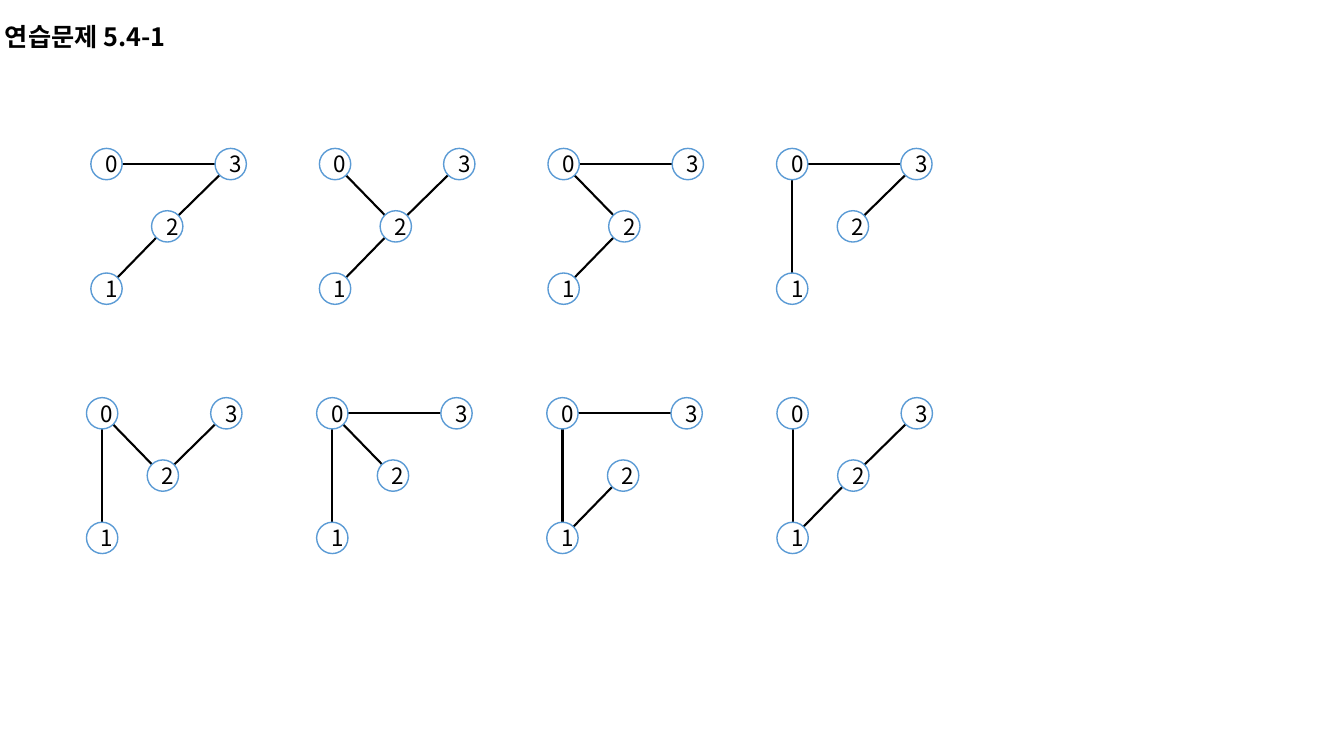
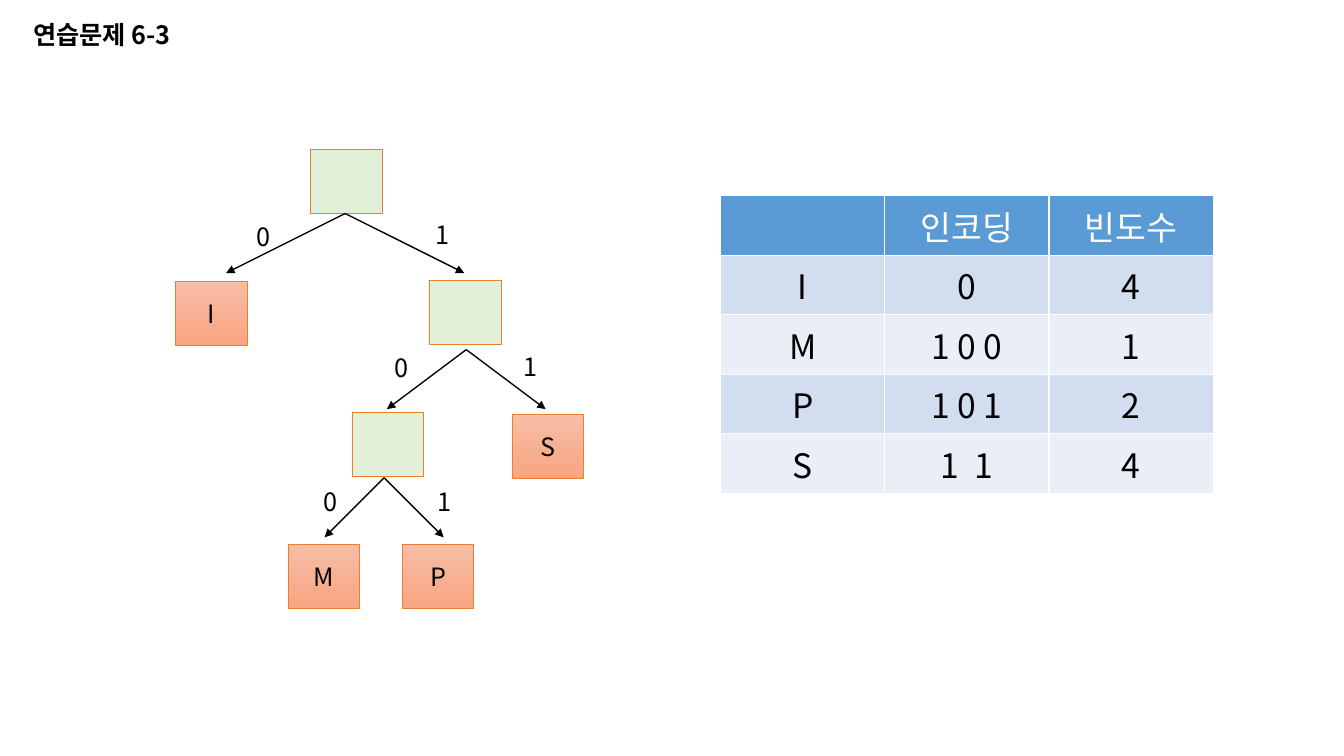
from dataclasses import dataclass

from lxml import etree
from pptx import Presentation
from pptx import util as u
from pptx.dml.color import RGBColor
from pptx.enum import shapes, text
from pptx.oxml import ns

Cm, Pt = u.Cm, u.Pt


@dataclass(frozen=True)
class Theme:
    font: str = "Noto Sans CJK KR"
    ink: str = "000000"
    paper: str = "FFFFFF"
    blue: str = "5B9BD5"
    bands: tuple = ("D2DEEF", "EAEFF7")
    green: str = "E2F0D9"
    rust: str = "ED7D31"
    fade: tuple = ("F7BDA5", "F8A582")
    small: int = 16
    body: int = 18
    large: int = 24


THEME = Theme()
KIND = shapes.MSO_SHAPE


def rgb(code):
    return RGBColor.from_string(code)


def sub(node, tag, **attrs):
    return etree.SubElement(node, ns.qn(tag), attrs)


def write(frame, words, size=THEME.body, color=THEME.ink, bold=False,
          wrap=True, anchor=text.MSO_ANCHOR.MIDDLE, lead=1.0):
    """Fill a text frame with one centred paragraph."""
    frame.word_wrap = wrap
    frame.vertical_anchor = anchor
    para = frame.paragraphs[0]
    para.alignment = text.PP_ALIGN.CENTER
    para.line_spacing = lead
    run = para.add_run()
    run.text = words
    font = run.font
    font.name, font.size, font.bold = THEME.font, Pt(size), bold
    font.color.rgb = rgb(color)
    sub(font._element, "a:ea", typeface=THEME.font)


class Deck:
    def __init__(self, theme):
        self.theme = theme
        self.file = Presentation()
        self.file.slide_width, self.file.slide_height = Cm(33.87), Cm(19.05)
        self.slide = None

    def page(self, title, left, width, lead=1.0):
        self.slide = self.file.slides.add_slide(self.file.slide_layouts[5])
        head = self.slide.shapes.title
        head.left, head.top = Cm(left), Cm(0.36)
        head.width, head.height = Cm(width), Cm(1.02)
        head.text_frame.auto_size = text.MSO_AUTO_SIZE.NONE
        write(head.text_frame, title, bold=True, wrap=False,
              anchor=text.MSO_ANCHOR.TOP, lead=lead)

    def shape(self, kind, x, y, w, h, fill, edge, width, words="", size=18):
        """Draw a preset shape; a pair of fills makes a downward gradient."""
        item = self.slide.shapes.add_shape(kind, Cm(x), Cm(y), Cm(w), Cm(h))
        item.shadow.inherit = False
        if isinstance(fill, tuple):
            item.fill.gradient()
            item.fill.gradient_angle = 270
            for stop, code in zip(item.fill.gradient_stops, fill):
                stop.color.rgb = rgb(code)
        else:
            item.fill.solid()
            item.fill.fore_color.rgb = rgb(fill)
        item.line.color.rgb = rgb(edge)
        item.line.width = Pt(width)
        if words:
            write(item.text_frame, words, size=size)

    def line(self, start, end, width, arrow=False):
        ends = [Cm(n) for n in (*start, *end)]
        item = self.slide.shapes.add_connector(shapes.MSO_CONNECTOR.STRAIGHT, *ends)
        item.line.color.rgb = rgb(self.theme.ink)
        item.line.width = Pt(width)
        if arrow:
            sub(item.line._get_or_add_ln(), "a:tailEnd", type="triangle")
        sub(item._element.spPr, "a:effectLst")

    def label(self, words, x, y):
        box = self.slide.shapes.add_textbox(Cm(x), Cm(y), Cm(0.86), Cm(1.02))
        write(box.text_frame, words, wrap=False, anchor=text.MSO_ANCHOR.TOP)

    def node(self, words, x, y):
        look = self.theme
        self.shape(KIND.OVAL, x, y, DOT, DOT, look.paper, look.blue, 1,
                   words, look.small)

    def box(self, words, x, y):
        """Draw a tree box: a leaf when it has a letter, else a branch."""
        look = self.theme
        self.shape(KIND.RECTANGLE, x, y, 1.8, 1.6,
                   look.fade if words else look.green, look.rust, 0.5, words)

    def graph(self, x, y, edges):
        """Draw the edges between centres, then the nodes over their ends."""
        half = DOT / 2
        for pair in edges.split():
            start, end = [(x + SPOTS[n][0] + half, y + SPOTS[n][1] + half)
                          for n in pair]
            self.line(start, end, 1.5)
        for name, (dx, dy) in SPOTS.items():
            self.node(name, x + dx, y + dy)

    def fork(self, x, y, reach, marks):
        """Draw the 0 and 1 arrows below a branch, with their labels."""
        for side, name, spot in zip((-1, 1), "01", marks):
            self.line((x, y), (x + side * reach, y + 1.5), 1, arrow=True)
            self.label(name, *spot)

    def table(self, rows, x, y, wide, high):
        look = self.theme
        count = len(rows[0])
        grid = self.slide.shapes.add_table(
            len(rows), count, Cm(x), Cm(y),
            Cm(wide * count), Cm(high * len(rows))).table
        for r, row in enumerate(rows):
            for c, words in enumerate(row):
                cell = grid.cell(r, c)
                self.rim(cell)
                cell.fill.solid()
                cell.fill.fore_color.rgb = rgb(look.bands[(r - 1) % 2] if r else look.blue)
                cell.vertical_anchor = text.MSO_ANCHOR.MIDDLE
                if words:
                    write(cell.text_frame, words, size=look.large,
                          color=look.ink if r else look.paper)

    def rim(self, cell):
        """Give a cell a thin border on all sides."""
        prop = cell._tc.get_or_add_tcPr()
        for side in "LRTB":
            edge = sub(prop, f"a:ln{side}", w=str(Pt(1)))
            sub(sub(edge, "a:solidFill"), "a:srgbClr", val=self.theme.paper)


DOT = 0.79
SPOTS = {"0": (0, 0), "3": (3.13, 0), "1": (0, 3.14), "2": (1.53, 1.57)}

# left, top, step and the edges of each graph in the row
GRAPHS = [
    (2.29, 3.74, 5.76, ["03 23 12", "02 23 12", "03 02 12", "03 23 01"]),
    (2.18, 10.02, 5.8, ["01 02 23", "01 02 03", "01 03 12", "01 12 23"]),
]

BOXES = [
    ("", 7.83, 3.77), ("I", 4.43, 7.1), ("", 10.83, 7.07), ("", 8.87, 10.4),
    ("S", 12.91, 10.45), ("M", 7.26, 13.72), ("P", 10.14, 13.72),
]

FORKS = [
    (8.7, 5.38, 3.0, [(6.2, 5.44), (10.72, 5.4)]),
    (11.75, 8.81, 2.0, [(9.7, 8.76), (12.93, 8.74)]),
    (9.68, 12.04, 1.5, [(7.9, 12.14), (10.77, 12.12)]),
]

CODES = [
    ("", "인코딩", "빈도수"),
    ("I", "0", "4"),
    ("M", "1 0 0", "1"),
    ("P", "1 0 1", "2"),
    ("S", "1  1", "4"),
]


def main():
    deck = Deck(THEME)

    deck.page("연습문제 5.4-1", -0.28, 4.85, lead=1.07)
    for left, top, step, row in GRAPHS:
        for col, edges in enumerate(row):
            deck.graph(left + col * step, top, edges)

    deck.page("연습문제 6-3", 0.41, 4.32)
    for item in BOXES:
        deck.box(*item)
    for item in FORKS:
        deck.fork(*item)
    deck.table(CODES, 18.16, 4.93, 4.14, 1.5)

    deck.file.save("out.pptx")


if __name__ == "__main__":
    main()
